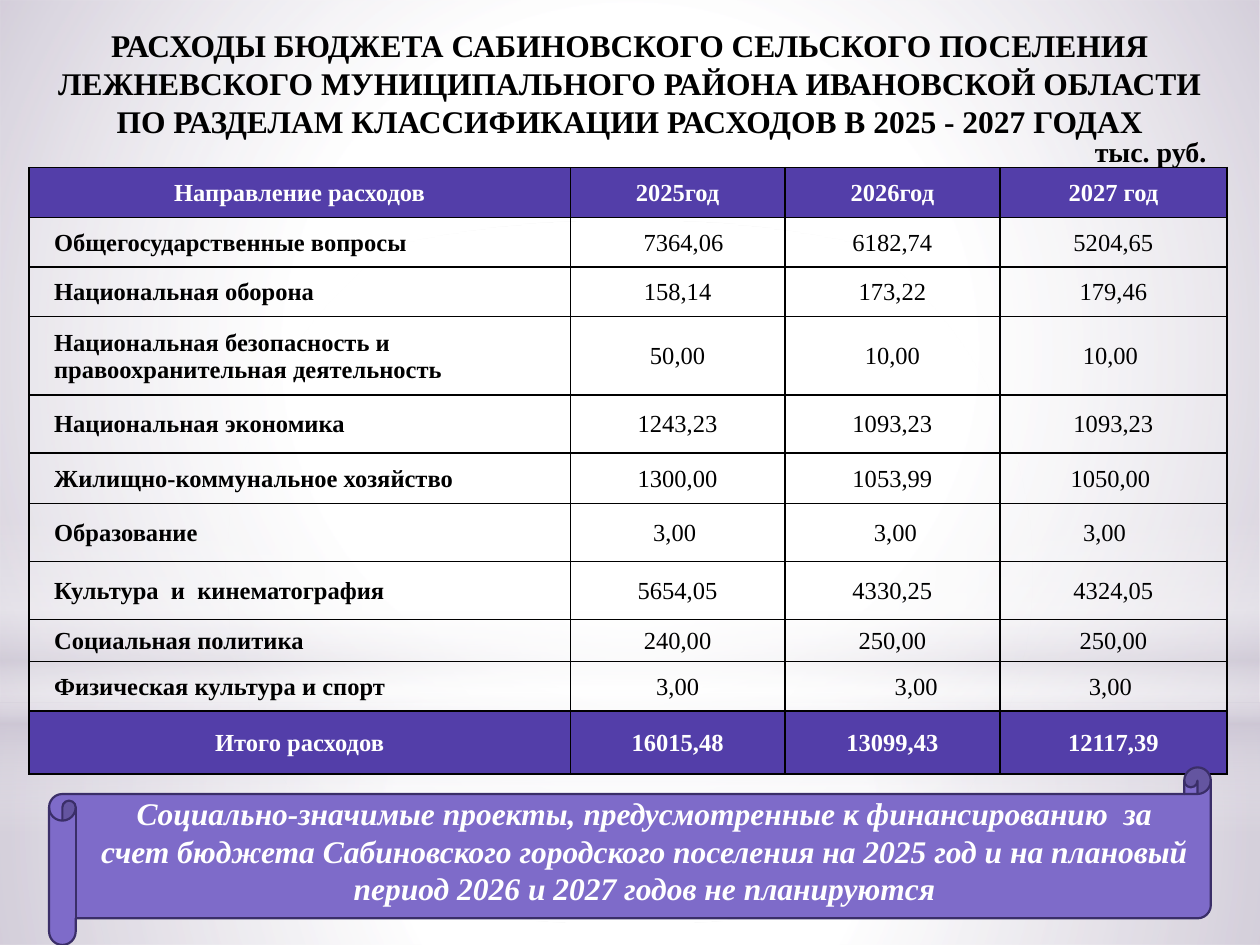
from lxml.etree import SubElement
from pptx import Presentation
from pptx.dml.color import RGBColor
from pptx.enum.shapes import MSO_SHAPE
from pptx.enum.text import MSO_ANCHOR, PP_ALIGN
from pptx.oxml import parse_xml
from pptx.oxml.ns import nsdecls, qn
from pptx.util import Cm, Pt

BLACK = RGBColor(0x00, 0x00, 0x00)
WHITE = RGBColor(0xFF, 0xFF, 0xFF)
MIST = RGBColor(0xC9, 0xC2, 0xD1)
VIOLET = RGBColor(0x53, 0x3E, 0xA9)
LILAC = RGBColor(0x7E, 0x6B, 0xC9)
DARK_VIOLET = RGBColor(0x3A, 0x2E, 0x68)
FONT = "Times New Roman"


def add_text(s, box, lines, size, color, align=PP_ALIGN.CENTER, italic=False, wrap=True):
    tf = s.shapes.add_textbox(*map(Cm, box)).text_frame
    tf.word_wrap = wrap
    for i, line in enumerate(lines):
        p = tf.add_paragraph() if i else tf.paragraphs[0]
        p.alignment = align
        r = p.add_run()
        r.text = line
        font = {"name": FONT, "size": Pt(size), "bold": True, "italic": italic}
        for name, value in font.items():
            setattr(r.font, name, value)
        r.font.color.rgb = color


prs = Presentation()
prs.slide_width, prs.slide_height = Cm(25.4), Cm(19.05)
s = prs.slides.add_slide(prs.slide_layouts[6])
s.background.fill.solid()
s.background.fill.fore_color.rgb = WHITE

# Background glow: preset, top, height, stops (position, colour, opacity)
RADIAL = '<a:path path="circle"><a:fillToRect l="50000" t="50000" r="50000" b="50000"/></a:path>'
LINEAR = '<a:lin ang="5400000" scaled="0"/>'
GLOWS = [
    (MSO_SHAPE.RECTANGLE, 14.17, 4.88, RADIAL,
     [(0, WHITE, 91), (37, WHITE, 76), (100, MIST, 79)]),
    (MSO_SHAPE.RECTANGLE, 0, 14.17, RADIAL,
     [(0, WHITE, 89), (48, WHITE, 62), (100, MIST, 79)]),
    (MSO_SHAPE.RECTANGLE, 10.46, 6.35, LINEAR,
     [(0, WHITE, 0), (29, WHITE, 30), (45, MIST, 40), (55, WHITE, 26),
      (65, MIST, 60), (100, WHITE, 0)]),
    (MSO_SHAPE.OVAL, 4.45, 14.17, RADIAL, [(0, WHITE, 100), (56, WHITE, 0)]),
]
for preset, top, height, direction, stops in GLOWS:
    sp = s.shapes.add_shape(preset, 0, Cm(top), prs.slide_width, Cm(height))
    sp.shadow.inherit = False
    sp.line.fill.background()
    gs = "".join(
        f'<a:gs pos="{pos * 1000}"><a:srgbClr val="{color}">'
        f'<a:alpha val="{opacity * 1000}"/></a:srgbClr></a:gs>'
        for pos, color, opacity in stops)
    sp._element.spPr.find(qn("a:prstGeom")).addnext(parse_xml(
        f'<a:gradFill {nsdecls("a")} rotWithShape="1"><a:gsLst>{gs}</a:gsLst>'
        f'{direction}</a:gradFill>'))

add_text(s, (0, 0.41, 25.4, 2.57), [
    "РАСХОДЫ БЮДЖЕТА САБИНОВСКОГО СЕЛЬСКОГО ПОСЕЛЕНИЯ "
    "ЛЕЖНЕВСКОГО МУНИЦИПАЛЬНОГО РАЙОНА ИВАНОВСКОЙ ОБЛАСТИ",
    "ПО РАЗДЕЛАМ КЛАССИФИКАЦИИ РАСХОДОВ В 2025 - 2027 ГОДАХ"], 18, BLACK)

COLS = [10.92, 4.32, 4.34, 4.57]
ROWS = [  # height, label, values by year
    (1, "Направление расходов", "2025год", "2026год", "2027 год"),
    (1, "Общегосударственные вопросы", "7364,06", "6182,74", "5204,65"),
    (1, "Национальная оборона", "158,14", "173,22", "179,46"),
    (1.58, "Национальная безопасность и правоохранительная деятельность",
     "50,00", "10,00", "10,00"),
    (1.17, "Национальная экономика", "1243,23", "1093,23", "1093,23"),
    (1.02, "Жилищно-коммунальное хозяйство", "1300,00", "1053,99", "1050,00"),
    (1.17, "Образование", "3,00", "3,00", "3,00"),
    (1.17, "Культура  и  кинематография", "5654,05", "4330,25", "4324,05"),
    (0.84, "Социальная политика", "240,00", "250,00", "250,00"),
    (1, "Физическая культура и спорт", "3,00", "3,00", "3,00"),
    (1.27, "Итого расходов", "16015,48", "13099,43", "12117,39"),
]
# Extra cell margin in cm: positive on the left, negative on the right
NUDGES = {(1, 1): 0.24, (3, 3): -0.12, (5, 3): -0.12, (6, 1): -0.12,
          (6, 2): 0.12, (6, 3): -0.36, (9, 2): 0.96, (9, 3): -0.12}

table = s.shapes.add_table(len(ROWS), len(COLS), Cm(0.58), Cm(3.38), Cm(sum(COLS)),
                           Cm(sum(row[0] for row in ROWS))).table
table.first_row = table.horz_banding = False
for column, width in zip(table.columns, COLS):
    column.width = Cm(width)
for i, (height, *texts) in enumerate(ROWS):
    table.rows[i].height = Cm(height)
    band = i in (0, len(ROWS) - 1)
    for j, text in enumerate(texts):
        cell = table.cell(i, j)
        label = j == 0 and not band
        nudge = 0.48 if label else NUDGES.get((i, j), 0)
        layout = {"vertical_anchor": MSO_ANCHOR.MIDDLE,
                  "margin_left": Cm(0.03 + max(nudge, 0)),
                  "margin_right": Cm(0.03 + max(-nudge, 0)),
                  "margin_top": Cm(0.03), "margin_bottom": 0}
        for name, value in layout.items():
            setattr(cell, name, value)
        tcPr = cell._tc.get_or_add_tcPr()
        for side in "LRTB":
            tcPr.append(parse_xml(
                f'<a:ln{side} {nsdecls("a")} w="12700"><a:solidFill>'
                f'<a:srgbClr val="{BLACK}"/></a:solidFill></a:ln{side}>'))
        cell.fill.solid()
        cell.fill.fore_color.rgb = VIOLET if band else WHITE
        if not band:
            color = tcPr.find(qn("a:solidFill")).find(qn("a:srgbClr"))
            SubElement(color, qn("a:alpha"), val="22000")
        p = cell.text_frame.paragraphs[0]
        p.alignment = PP_ALIGN.LEFT if label else PP_ALIGN.CENTER
        r = p.add_run()
        r.text = text
        for name, value in {"name": FONT, "size": Pt(14), "bold": band or label}.items():
            setattr(r.font, name, value)
        r.font.color.rgb = WHITE if band else BLACK

add_text(s, (21.82, 2.59, 2.79, 0.94), ["тыс. руб."], 16, BLACK, PP_ALIGN.LEFT, wrap=False)

scroll = s.shapes.add_shape(MSO_SHAPE.HORIZONTAL_SCROLL,
                            Cm(0.99), Cm(15.47), Cm(23.42), Cm(3.58))
scroll.adjustments[0] = 0.15
scroll.shadow.inherit = False
scroll.fill.solid()
scroll.fill.fore_color.rgb = LILAC
scroll.line.color.rgb = DARK_VIOLET
scroll.line.width = Pt(1.25)
add_text(s, (1.78, 15.88, 22.43, 2.57), [
    "Социально-значимые проекты, предусмотренные к финансированию  за счет бюджета "
    "Сабиновского городского поселения на 2025 год и на плановый период 2026 и 2027 "
    "годов не планируются"], 18, WHITE, italic=True)

prs.save("out.pptx")
